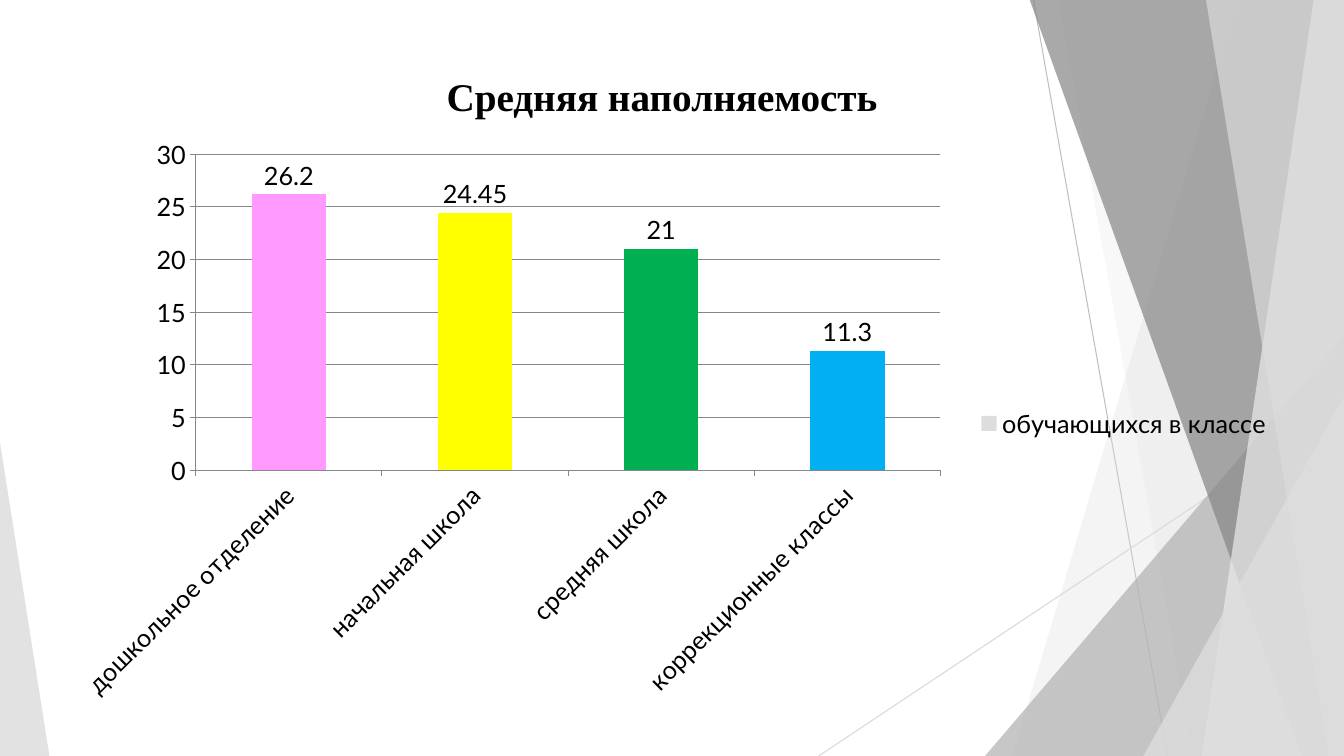
from lxml import etree
from pptx import Presentation
from pptx import util as u
from pptx.chart.data import CategoryChartData
from pptx.dml.color import RGBColor
from pptx.enum import chart as ch, shapes, text
from pptx.oxml import parse_xml
from pptx.oxml.ns import qn

COLORS = {
    "black": "000000", "axis": "878787", "line_dark": "BFBFBF", "line_light": "D9D9D9",
    "pale": "DDDDDD", "mid": "B2B2B2", "dark": "858585", "light": "EBEBEB",
    "pink": "FF99FF", "yellow": "FFFF00", "green": "00B050", "blue": "00B0F0",
}
WIDTH, HEIGHT = 13.33, 7.5


def rgb(name):
    return RGBColor.from_string(COLORS[name])


def paint(sp, color, opacity):
    sp.shadow.inherit = False
    sp.line.fill.background()
    sp.fill.solid()
    sp.fill.fore_color.rgb = rgb(color)
    clr = sp.fill._xPr.find(qn("a:solidFill"))[0]
    etree.SubElement(clr, qn("a:alpha")).set("val", str(opacity * 1000))


prs = Presentation()
prs.slide_width, prs.slide_height = u.Inches(WIDTH), u.Inches(HEIGHT)
s = prs.slides.add_slide(prs.slide_layouts[6])

for x1, y1, x2, y2, color in [
    (10.25, 0, 11.58, HEIGHT, "line_dark"),
    (WIDTH, 4.03, 8.12, HEIGHT, "line_light"),
]:
    ln = s.shapes.add_connector(shapes.MSO_CONNECTOR.STRAIGHT, *map(u.Inches, (x1, y1, x2, y2)))
    ln.line.color.rgb = rgb(color)
    ln.line.width = u.Pt(0.75)
    etree.SubElement(ln._element.spPr, qn("a:effectLst"))

for kind, a, b, color, opacity in [
    ("band", 12.28, 10.04, "pale", 30),
    ("band", 10.5, 11.83, "pale", 20),
    ("right", 9.77, 3.33, "mid", 72),
    ("band", 10.21, 12.91, "dark", 70),
    ("band", 13.03, 11.92, "light", 70),
    ("band", 11.96, 13.18, "pale", 65),
    ("right", 11.34, 3.93, "pale", 80),
    ("left", 0.49, 4.39, "pale", 85),
]:
    if kind == "band":
        fb = s.shapes.build_freeform(u.Inches(a), u.Inches(-0.01))
        corners = [(WIDTH, -0.01), (WIDTH, HEIGHT), (b, HEIGHT)]
        fb.add_line_segments([(u.Inches(x), u.Inches(y)) for x, y in corners], close=True)
        sp = fb.convert_to_shape()
    else:
        left, width = (a, WIDTH - a) if kind == "right" else (0, a)
        sp = s.shapes.add_shape(shapes.MSO_SHAPE.ISOSCELES_TRIANGLE,
                                *map(u.Inches, (left, b, width, HEIGHT - b)))
        sp.adjustments[0] = 1 if kind == "right" else 0
    paint(sp, color, opacity)

title = s.shapes.add_textbox(*map(u.Inches, (0.74, 0.67, 11.65, 1.44)))
tf = title.text_frame
tf.word_wrap = True
tf.vertical_anchor = text.MSO_ANCHOR.TOP
p = tf.paragraphs[0]
p.text = "Средняя наполняемость"
p.alignment = text.PP_ALIGN.CENTER
p.font.name, p.font.size, p.font.bold = "Times New Roman", u.Pt(28), True
p.font.color.rgb = rgb("black")

data = CategoryChartData()
data.categories = ["дошкольное отделение", "начальная школа", "средняя школа", "коррекционные классы"]
data.add_series("обучающихся в классе", [26.2, 24.45, 21, 11.3])
chart = s.shapes.add_chart(ch.XL_CHART_TYPE.COLUMN_CLUSTERED,
                           *map(u.Inches, (0.61, 1.3, 12.11, 5.8)), data).chart
chart.has_title = False
chart.font.name, chart.font.size = "Lato", u.Pt(18)
chart.font.color.rgb = rgb("black")
chart.has_legend = True
chart.legend.position = ch.XL_LEGEND_POSITION.RIGHT
chart.legend.include_in_layout = False

cat, val = chart.category_axis, chart.value_axis
val.minimum_scale, val.maximum_scale, val.major_unit = 0, 30, 5
val.has_major_gridlines = True
for axis in (cat, val):
    axis.major_tick_mark = ch.XL_TICK_MARK.OUTSIDE
    axis.format.line.color.rgb = rgb("axis")
val.major_gridlines.format.line.color.rgb = rgb("axis")
cat.tick_labels.font.size = u.Pt(18)
cat._element.find(qn("c:txPr")).find(qn("a:bodyPr")).set("rot", "-2700000")

plot = chart.plots[0]
plot.gap_width = 150
plot.vary_by_categories = False
plot.has_data_labels = True
plot.data_labels.show_value = True
plot.data_labels.position = ch.XL_LABEL_POSITION.OUTSIDE_END
series = plot.series[0]
series.format.fill.solid()
series.format.fill.fore_color.rgb = rgb("pale")
for i, color in enumerate(["pink", "yellow", "green", "blue"]):
    fill = series.points[i].format.fill
    fill.solid()
    fill.fore_color.rgb = rgb(color)

area = chart._chartSpace.chart.plotArea
for old in area.findall(qn("c:layout")):
    area.remove(old)
area.insert(0, parse_xml(
    '<c:layout xmlns:c="http://schemas.openxmlformats.org/drawingml/2006/chart"><c:manualLayout>'
    '<c:layoutTarget val="inner"/><c:xMode val="edge"/><c:yMode val="edge"/>'
    '<c:x val="0.11"/><c:y val="0.04"/><c:w val="0.61"/><c:h val="0.54"/>'
    '</c:manualLayout></c:layout>'))

prs.save("out.pptx")
